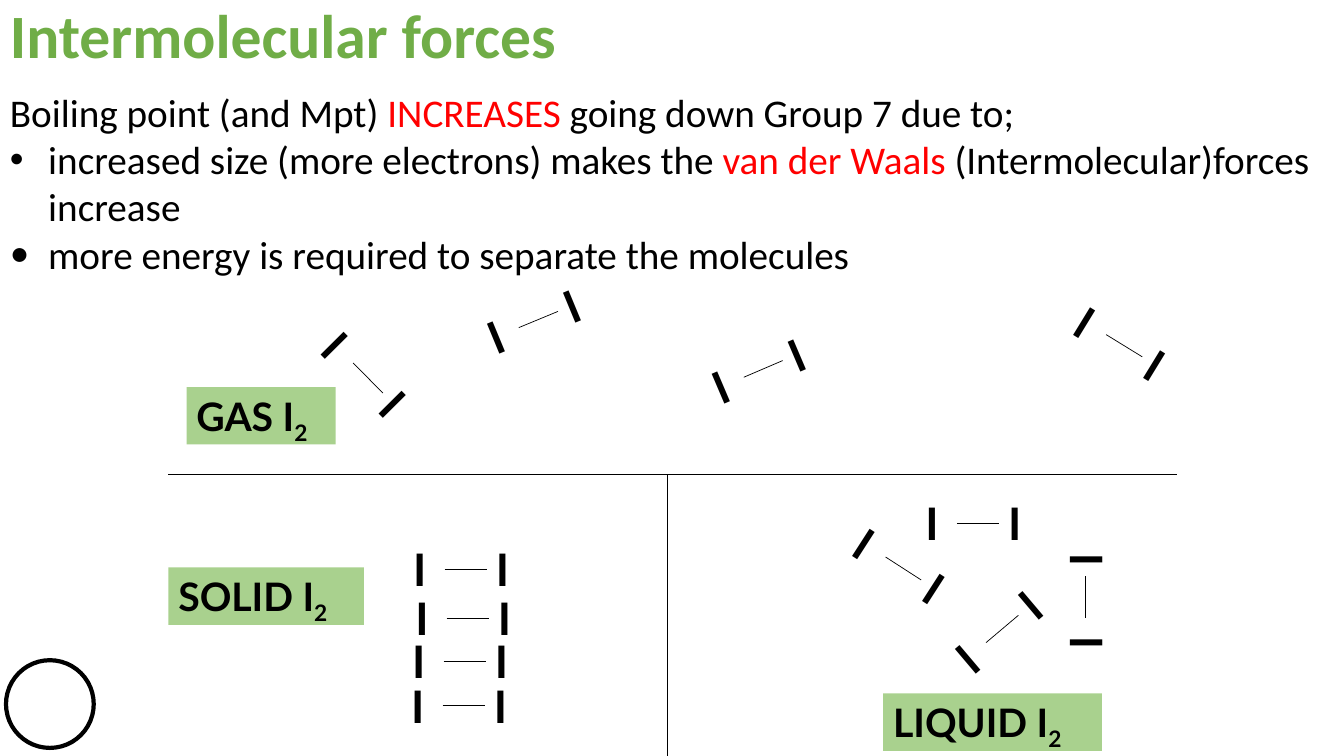
from dataclasses import dataclass
from math import cos, radians, sin

from lxml.etree import SubElement
from pptx import Presentation
from pptx.dml.color import RGBColor
from pptx.enum.shapes import MSO_CONNECTOR, MSO_SHAPE
from pptx.enum.text import MSO_ANCHOR, PP_ALIGN
from pptx.oxml.ns import qn
from pptx.util import Inches, Pt


@dataclass(frozen=True)
class Theme:
    ink: str = "000000"
    paper: str = "FFFFFF"
    green: str = "70AD47"
    label: str = "A9D18E"
    red: str = "FF0000"
    head: str = "Calibri"
    mark: str = "Lato"
    title: int = 44
    atom: int = 32
    body: int = 28
    thin: float = 0.5
    thick: float = 3


class Board:
    def __init__(self, slide, theme):
        self.slide = slide
        self.theme = theme

    def font(self, para, face, size, color, bold=False):
        font = para.font
        font.name = face
        font.size = Pt(size)
        font.bold = bold
        font.color.rgb = RGBColor.from_string(color)

    def line(self, x1, y1, x2, y2, shapes=None):
        shapes = shapes or self.slide.shapes
        line = shapes.add_connector(
            MSO_CONNECTOR.STRAIGHT, Inches(x1), Inches(y1), Inches(x2), Inches(y2)
        )
        line.line.color.rgb = RGBColor.from_string(self.theme.ink)
        line.line.width = Pt(self.theme.thin)
        SubElement(line._element.spPr, qn("a:effectLst"))

    def shape(self, kind, x, y, wide, high, fill):
        shape = self.slide.shapes.add_shape(
            kind, Inches(x), Inches(y), Inches(wide), Inches(high)
        )
        shape.shadow.inherit = False
        shape.fill.solid()
        shape.fill.fore_color.rgb = RGBColor.from_string(fill)
        return shape

    def ring(self, x, y, size):
        ring = self.shape(MSO_SHAPE.OVAL, x, y, size, size, self.theme.paper)
        ring.line.color.rgb = RGBColor.from_string(self.theme.ink)
        ring.line.width = Pt(self.theme.thick)

    def text(self, x, y, wide, high, shapes=None):
        shapes = shapes or self.slide.shapes
        box = shapes.add_textbox(Inches(x), Inches(y), Inches(wide), Inches(high))
        box.text_frame.word_wrap = True
        return box

    def atom(self, x, y, turn, shapes):
        wide, high = 0.42, 0.64
        box = self.text(x - wide / 2, y - high / 2, wide, high, shapes)
        box.rotation = turn
        para = box.text_frame.paragraphs[0]
        para.text = "I"
        self.font(para, self.theme.mark, self.theme.atom, self.theme.ink, True)

    def pair(self, x, y, turn=0):
        shapes = self.slide.shapes.add_group_shape().shapes
        dx, dy = cos(radians(turn)), sin(radians(turn))
        bond, gap = 0.21, 0.41
        self.line(x - bond * dx, y - bond * dy, x + bond * dx, y + bond * dy, shapes)
        for side in (-gap, gap):
            self.atom(x + side * dx, y + side * dy, turn, shapes)

    def label(self, state, x, y, wide):
        box = self.shape(MSO_SHAPE.RECTANGLE, x, y, wide, 0.57, self.theme.label)
        box.line.fill.background()
        frame = box.text_frame
        frame.word_wrap = True
        frame.vertical_anchor = MSO_ANCHOR.TOP
        para = frame.paragraphs[0]
        para.alignment = PP_ALIGN.LEFT
        para.add_run().text = f"{state} I"
        sub = para.add_run()
        sub.text = "2"
        sub.font._element.set("baseline", "-25000")
        self.font(para, self.theme.mark, self.theme.body, self.theme.ink, True)

    def title(self, words):
        para = self.text(0, 0, 12.42, 1.45).text_frame.paragraphs[0]
        para.text = words
        para.line_spacing = 0.9
        self.font(para, self.theme.head, self.theme.title, self.theme.green, True)

    def bullet(self, para, face):
        props = para._p.get_or_add_pPr()
        props.set("marL", str(Inches(0.38)))
        props.set("indent", str(-Inches(0.38)))
        SubElement(props, qn("a:buFont")).set("typeface", face)
        SubElement(props, qn("a:buChar")).set("char", "•")

    def body(self, items):
        frame = self.text(0, 0.83, 13.28, 1.99).text_frame
        for num, (face, runs) in enumerate(items):
            para = frame.add_paragraph() if num else frame.paragraphs[0]
            if face:
                self.bullet(para, face)
            self.font(para, self.theme.head, self.theme.body, self.theme.ink)
            for words, hot in runs:
                run = para.add_run()
                run.text = words
                if hot:
                    run.font.color.rgb = RGBColor.from_string(self.theme.red)


SOLID = [(4.62, 5.65), (4.64, 6.13), (4.61, 6.56), (4.6, 7)]
LIQUID = [(9.7, 5.19, 0), (9.94, 6.24, 319.8), (8.96, 5.64, 32.8), (10.76, 5.92, 270)]
GAS = [(5.34, 3.17, 337.5), (7.57, 3.66, 336.8), (3.65, 3.75, 45.2), (11.15, 3.43, 31.6)]
LABELS = [("SOLID", 1.67, 5.63, 1.94), ("LIQUID", 8.76, 6.88, 2.17), ("GAS", 1.85, 3.84, 1.48)]
BODY = [
    (None, [
        ("Boiling point (and Mpt) ", False),
        ("INCREASES", True),
        (" going down Group 7 due to;", False),
    ]),
    ("Arial", [
        ("increased size (more electrons) makes the ", False),
        ("van der Waals ", True),
        ("(Intermolecular)forces increase", False),
    ]),
    ("Calibri", [("more energy is required to separate the molecules", False)]),
]


def main():
    deck = Presentation()
    deck.slide_width = Inches(13.33)
    deck.slide_height = Inches(7.5)
    board = Board(deck.slides.add_slide(deck.slide_layouts[6]), Theme())
    board.ring(0.06, 6.55, 0.87)
    for place in SOLID + LIQUID + GAS:
        board.pair(*place)
    board.line(1.67, 4.71, 11.67, 4.71)
    board.line(6.62, 4.71, 6.62, 7.5)
    for label in LABELS:
        board.label(*label)
    board.body(BODY)
    board.title("Intermolecular forces")
    deck.save("out.pptx")


if __name__ == "__main__":
    main()
